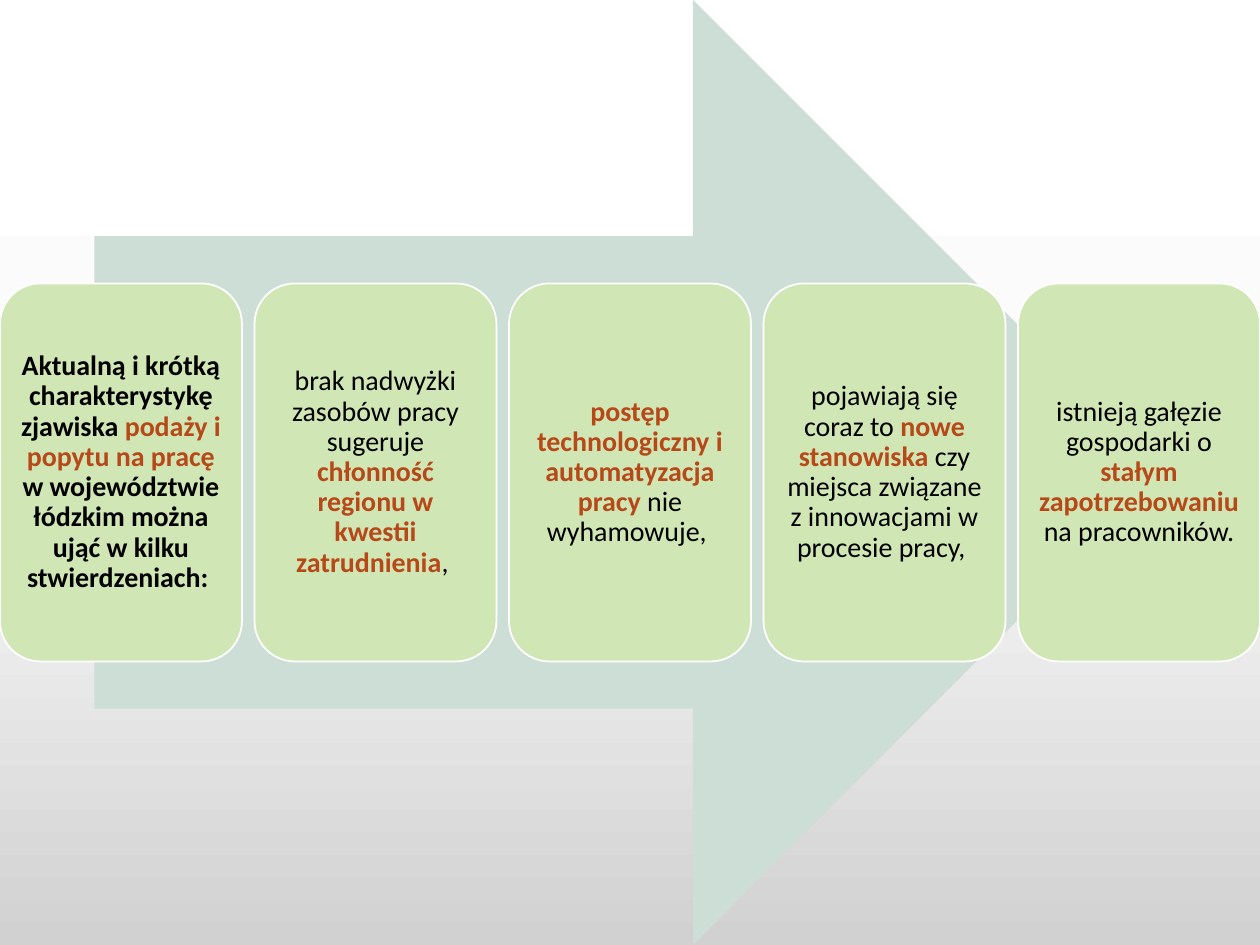
"""Builds a slide with five statement boxes laid over a wide right arrow."""
from copy import deepcopy

from pptx import Presentation
from pptx.dml.color import RGBColor
from pptx.enum.shapes import MSO_SHAPE
from pptx.enum.text import MSO_ANCHOR, PP_ALIGN
from pptx.oxml.ns import qn
from pptx.util import Inches, Pt

STATEMENTS = [
    [("Aktualną i krótką charakterystykę zjawiska ", "strong"),
     ("podaży i popytu na pracę ", "accent"),
     ("w województwie łódzkim można ująć w kilku stwierdzeniach: ", "strong")],
    [("brak nadwyżki zasobów pracy sugeruje ", "plain"),
     ("chłonność regionu w kwestii zatrudnienia", "accent"),
     (", ", "plain")],
    [("postęp technologiczny i automatyzacja pracy ", "accent"),
     ("nie wyhamowuje, ", "plain")],
    [("pojawiają się coraz to ", "plain"),
     ("nowe stanowiska ", "accent"),
     ("czy miejsca związane z innowacjami w procesie pracy, ", "plain")],
    [("istnieją gałęzie gospodarki o ", "plain"),
     ("stałym zapotrzebowaniu ", "accent"),
     ("na pracowników.", "plain")],
]

THEME = {
    "font": "Calibri",
    "size": 16,
    "arrow": "CDDED6",
    "box": "D1E6B5",
    "outline": "FFFFFF",
    "background": [(0, "FFFFFF"), (0.5, "FBFBFB"), (1, "D1D1D1")],
    "styles": {
        "plain": {"color": "000000", "bold": False},
        "strong": {"color": "000000", "bold": True},
        "accent": {"color": "B74919", "bold": True},
    },
}

SLIDE_W, SLIDE_H = 10, 7.5
ARROW_W = 8.5
BOX_TOP, BOX_H, GAP = 2.25, 3, 0.1
BOX_W = (SLIDE_W - GAP * (len(STATEMENTS) - 1)) / len(STATEMENTS)


def paint_background(s, stops):
    fill = s.background.fill
    fill.gradient()
    fill.gradient_angle = 270
    first = next(s.element.iter(qn("a:gs")))
    first.addnext(deepcopy(first))
    for stop, (position, color) in zip(fill.gradient_stops, stops):
        stop.position = position
        stop.color.rgb = RGBColor.from_string(color)


def add_block(s, kind, left, top, width, height, color):
    sp = s.shapes.add_shape(kind, Inches(left), Inches(top), Inches(width), Inches(height))
    sp.shadow.inherit = False
    sp.fill.solid()
    sp.fill.fore_color.rgb = RGBColor.from_string(color)
    sp.line.fill.background()
    return sp


def add_text(p, text, *, color, bold):
    r = p.add_run()
    r.text = text
    r.font.name = THEME["font"]
    r.font.size = Pt(THEME["size"])
    r.font.bold = bold
    r.font.color.rgb = RGBColor.from_string(color)


def add_statement(s, left, runs):
    sp = add_block(s, MSO_SHAPE.ROUNDED_RECTANGLE, left, BOX_TOP, BOX_W, BOX_H, THEME["box"])
    sp.line.color.rgb = RGBColor.from_string(THEME["outline"])
    sp.line.width = Pt(1)
    tf = sp.text_frame
    tf.word_wrap = True
    tf.vertical_anchor = MSO_ANCHOR.MIDDLE
    tf.margin_left = tf.margin_right = tf.margin_top = tf.margin_bottom = Inches(0.06)
    p = tf.paragraphs[0]
    p.alignment = PP_ALIGN.CENTER
    p.line_spacing = 0.9
    for text, style in runs:
        add_text(p, text, **THEME["styles"][style])


def main():
    prs = Presentation()
    prs.slide_width, prs.slide_height = Inches(SLIDE_W), Inches(SLIDE_H)
    s = prs.slides.add_slide(prs.slide_layouts[6])
    paint_background(s, THEME["background"])
    add_block(s, MSO_SHAPE.RIGHT_ARROW, (SLIDE_W - ARROW_W) / 2, 0, ARROW_W, SLIDE_H, THEME["arrow"])
    for i, runs in enumerate(STATEMENTS):
        add_statement(s, i * (BOX_W + GAP), runs)
    prs.save("out.pptx")


if __name__ == "__main__":
    main()
